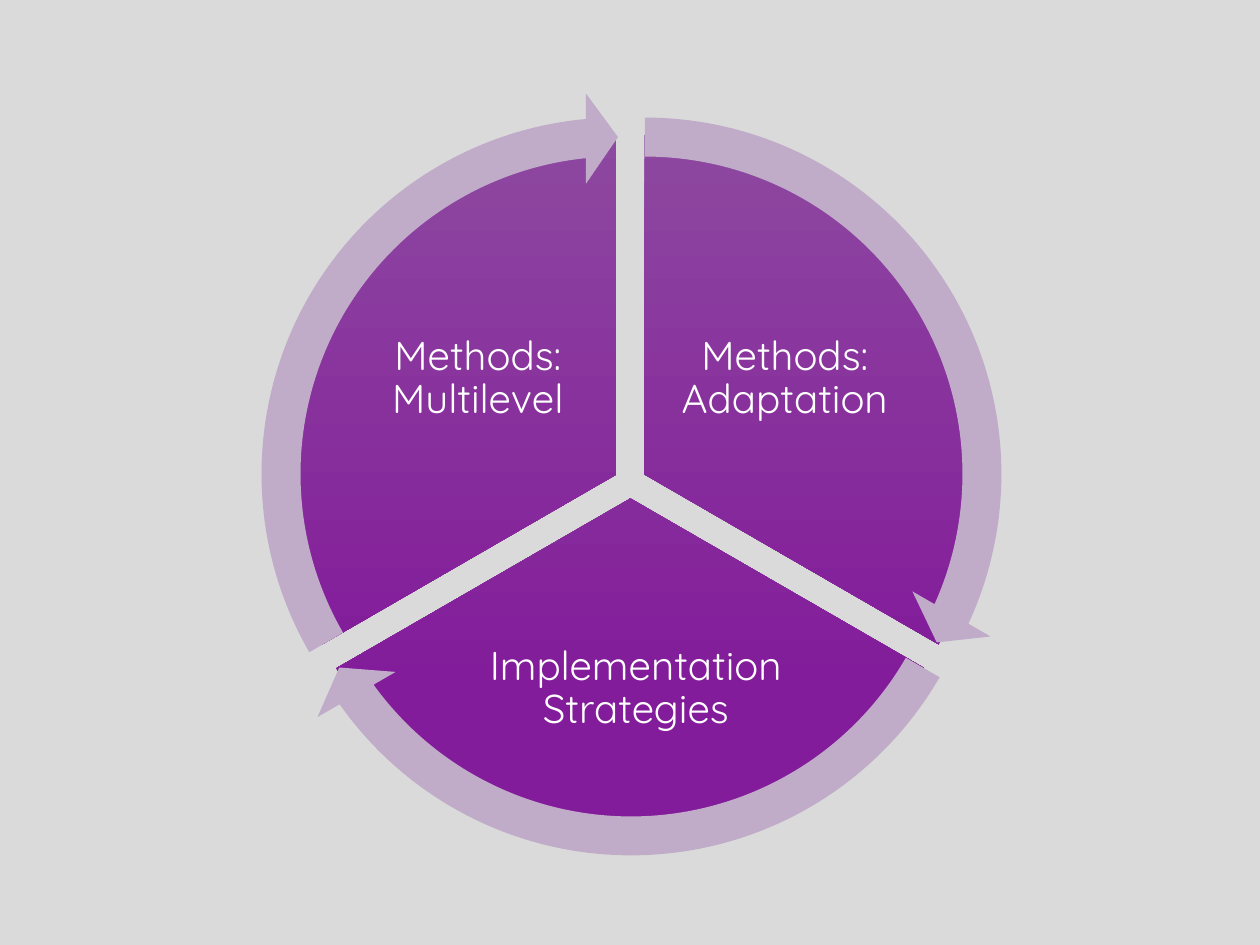
import pptx
import pptx.dml.color
import pptx.enum.shapes
import pptx.enum.text
import pptx.util

COLORS = {
    "background": "DADADA",
    "sector_top": "8D48A0",
    "sector_bottom": "831C9A",
    "arrow": "C0ACC8",
    "label": "FFFFFF",
}
SHAPE = pptx.enum.shapes.MSO_SHAPE


def px(length):
    return pptx.util.Emu(round(length * 914400 / 126))


def color(name):
    return pptx.dml.color.RGBColor.from_string(COLORS[name])


deck = pptx.Presentation()
deck.slide_width = px(1260)
deck.slide_height = px(945)
page = deck.slides.add_slide(deck.slide_layouts[6])
page.background.fill.solid()
page.background.fill.fore_color.rgb = color("background")

sectors = [
    ("Methods: Adaptation", (305, 135), (162, 18), (664, 278, 242, 202)),
    ("Implementation Strategies", (291, 159), (18, 90), (454, 600, 364, 178)),
    ("Methods: Multilevel", (277, 135), (90, 162), (357, 278, 242, 202)),
]
for label, (left, top), angles, label_area in sectors:
    sector = page.shapes.add_shape(SHAPE.PIE, px(left), px(top), px(679), px(679))
    sector.shadow.inherit = False
    sector.line.fill.background()
    for index, angle in enumerate(angles):
        sector.adjustments[index] = angle
    sector.fill.gradient()
    sector.fill.gradient_angle = 270
    stops = zip(sector.fill.gradient_stops, (0, 0.78), ("sector_top", "sector_bottom"))
    for stop, position, name in stops:
        stop.position = position
        stop.color.rgb = color(name)

    box = page.shapes.add_textbox(*[px(length) for length in label_area])
    frame = box.text_frame
    frame.word_wrap = True
    frame.vertical_anchor = pptx.enum.text.MSO_ANCHOR.MIDDLE
    frame.margin_left = frame.margin_right = px(4)
    frame.margin_top = frame.margin_bottom = px(4)
    para = frame.paragraphs[0]
    para.alignment = pptx.enum.text.PP_ALIGN.CENTER
    para.line_spacing = 0.9
    para.space_after = pptx.util.Pt(8)
    span = para.add_run()
    span.text = label
    span.font.name = "Quicksand"
    span.font.size = pptx.util.Pt(23)
    span.font.color.rgb = color("label")

arrows = [
    (263, 92, 14.725, 161.994),
    (249, 117, 86.72, 18.005),
    (236, 92, 158.73, 90),
]
for left, top, end_angle, start_angle in arrows:
    arrow = page.shapes.add_shape(
        SHAPE.CIRCULAR_ARROW, px(left), px(top), px(764), px(764)
    )
    arrow.shadow.inherit = False
    arrow.line.fill.background()
    arrow.fill.solid()
    arrow.fill.fore_color.rgb = color("arrow")
    for index, value in enumerate((0.051, 3.275, end_angle, start_angle, 0.059)):
        arrow.adjustments[index] = value

deck.save("out.pptx")
